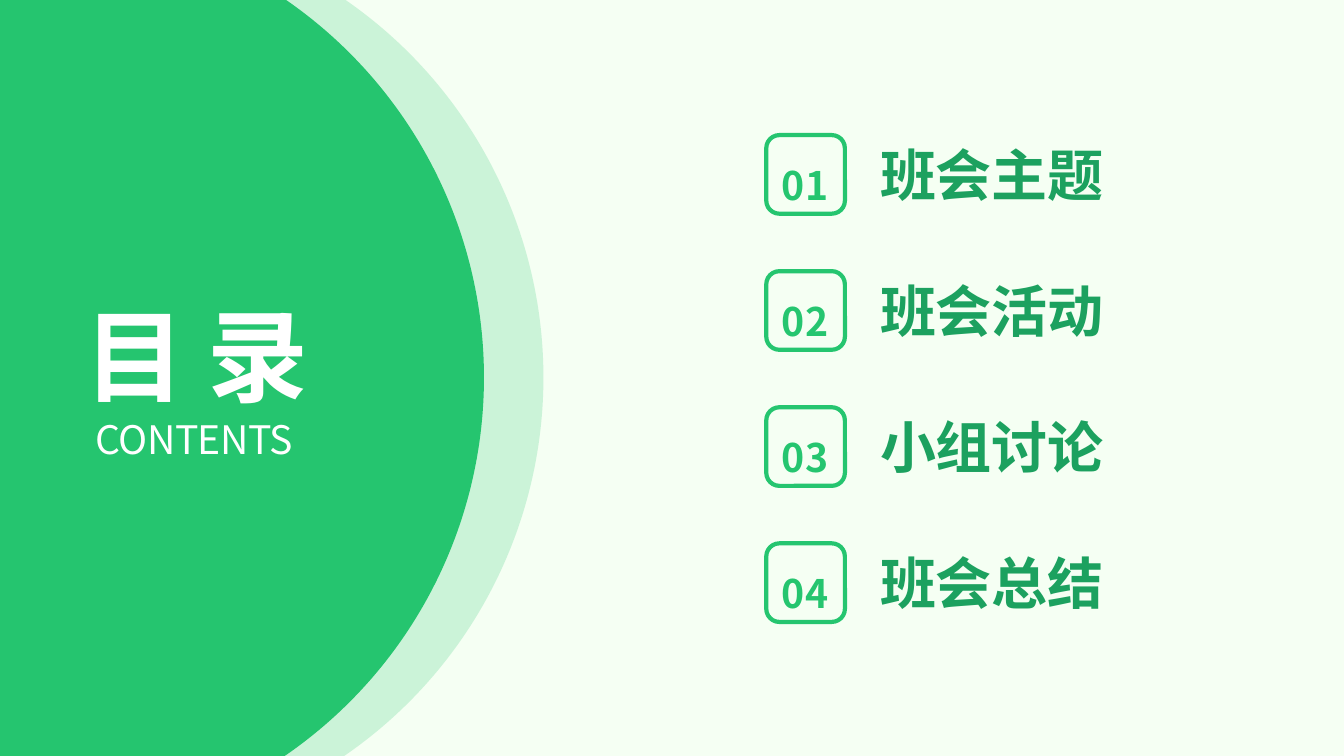
"""Build a contents slide with a green circle title and four numbered topics."""
from dataclasses import dataclass

from lxml.etree import SubElement
from pptx import Presentation
from pptx.dml.color import RGBColor
from pptx.enum.shapes import MSO_SHAPE
from pptx.enum.text import MSO_ANCHOR, PP_ALIGN
from pptx.oxml.ns import qn
from pptx.shapes.autoshape import Shape
from pptx.slide import Slide
from pptx.util import Inches, Pt

FONT = "Noto Sans CJK JP"
GREEN = "25C56F"
DARK_GREEN = "1CA15F"
WHITE = "FFFFFF"
BACKGROUND = "F5FFF3"
CIRCLE_TOP, CIRCLE_SIZE = -0.81, 9.11
FIRST_TOPIC_TOP, TOPIC_PITCH = 1.34, 1.35
BADGE_LEFT, BADGE_SIZE = 7.6, 0.78


@dataclass
class Circle:
    left: float
    opacity: int


@dataclass
class Topic:
    number: str
    title: str


CIRCLES = [Circle(-3.72, 20), Circle(-4.31, 100)]
TOPICS = [
    Topic("01", "班会主题"),
    Topic("02", "班会活动"),
    Topic("03", "小组讨论"),
    Topic("04", "班会总结"),
]


def color(value: str) -> RGBColor:
    return RGBColor.from_string(value)


def add_text(
    slide: Slide,
    text: str,
    left: float,
    top: float,
    width: float,
    height: float,
    *,
    size: float,
    font_color: str,
    bold: bool = True,
    align: PP_ALIGN = PP_ALIGN.JUSTIFY,
    anchor: MSO_ANCHOR = MSO_ANCHOR.TOP,
    top_inset: float = 0.05,
    bottom_inset: float = 0.05,
    space_after: float = 0,
    spacing: float = 0,
) -> Shape:
    shape = slide.shapes.add_textbox(Inches(left), Inches(top), Inches(width), Inches(height))
    frame = shape.text_frame
    frame.word_wrap = True
    frame.vertical_anchor = anchor
    frame.margin_top = Inches(top_inset)
    frame.margin_bottom = Inches(bottom_inset)
    paragraph = frame.paragraphs[0]
    paragraph.alignment = align
    paragraph.space_after = Pt(space_after)
    run = paragraph.add_run()
    run.text = text
    run.font.size = Pt(size)
    run.font.bold = bold
    run.font.name = FONT
    run.font.color.rgb = color(font_color)
    properties = run._r.get_or_add_rPr()
    SubElement(properties, qn("a:ea")).set("typeface", FONT)
    if spacing:
        properties.set("spc", str(round(spacing * 100)))
    return shape


def add_circle(slide: Slide, circle: Circle) -> None:
    shape = slide.shapes.add_shape(
        MSO_SHAPE.OVAL,
        Inches(circle.left), Inches(CIRCLE_TOP), Inches(CIRCLE_SIZE), Inches(CIRCLE_SIZE),
    )
    shape.shadow.inherit = False
    shape.line.fill.background()
    shape.fill.solid()
    shape.fill.fore_color.rgb = color(GREEN)
    if circle.opacity < 100:
        fill_color = shape._element.spPr.find(qn("a:solidFill"))[0]
        SubElement(fill_color, qn("a:alpha")).set("val", str(circle.opacity * 1000))


def add_topic(slide: Slide, topic: Topic, top: float) -> None:
    add_text(slide, topic.title, 8.63, top, 2.69, 0.77, size=40, font_color=DARK_GREEN)
    badge = slide.shapes.add_shape(
        MSO_SHAPE.ROUNDED_RECTANGLE,
        Inches(BADGE_LEFT), Inches(top), Inches(BADGE_SIZE), Inches(BADGE_SIZE),
    )
    badge.shadow.inherit = False
    badge.fill.background()
    badge.line.color.rgb = color(GREEN)
    badge.line.width = Pt(3)
    add_text(
        slide, topic.number, BADGE_LEFT + 0.02, top + 0.07, 0.73, 0.63,
        size=28, font_color=GREEN, align=PP_ALIGN.CENTER, anchor=MSO_ANCHOR.MIDDLE,
        top_inset=0.22, bottom_inset=0, space_after=16,
    )


def main() -> None:
    presentation = Presentation()
    presentation.slide_width = Inches(13.33)
    presentation.slide_height = Inches(7.5)
    slide = presentation.slides.add_slide(presentation.slide_layouts[6])
    slide.background.fill.solid()
    slide.background.fill.fore_color.rgb = color(BACKGROUND)
    for circle in CIRCLES:
        add_circle(slide, circle)
    for index, topic in enumerate(TOPICS):
        add_topic(slide, topic, FIRST_TOPIC_TOP + index * TOPIC_PITCH)
    add_text(
        slide, "目录", 0.74, 2.86, 3.52, 1.31,
        size=72, font_color=WHITE, align=PP_ALIGN.LEFT, spacing=16,
    )
    add_text(
        slide, "CONTENTS", 0.85, 4.07, 2.27, 0.57,
        size=28, font_color=WHITE, bold=False, spacing=-0.4,
    )
    presentation.save("out.pptx")


if __name__ == "__main__":
    main()
